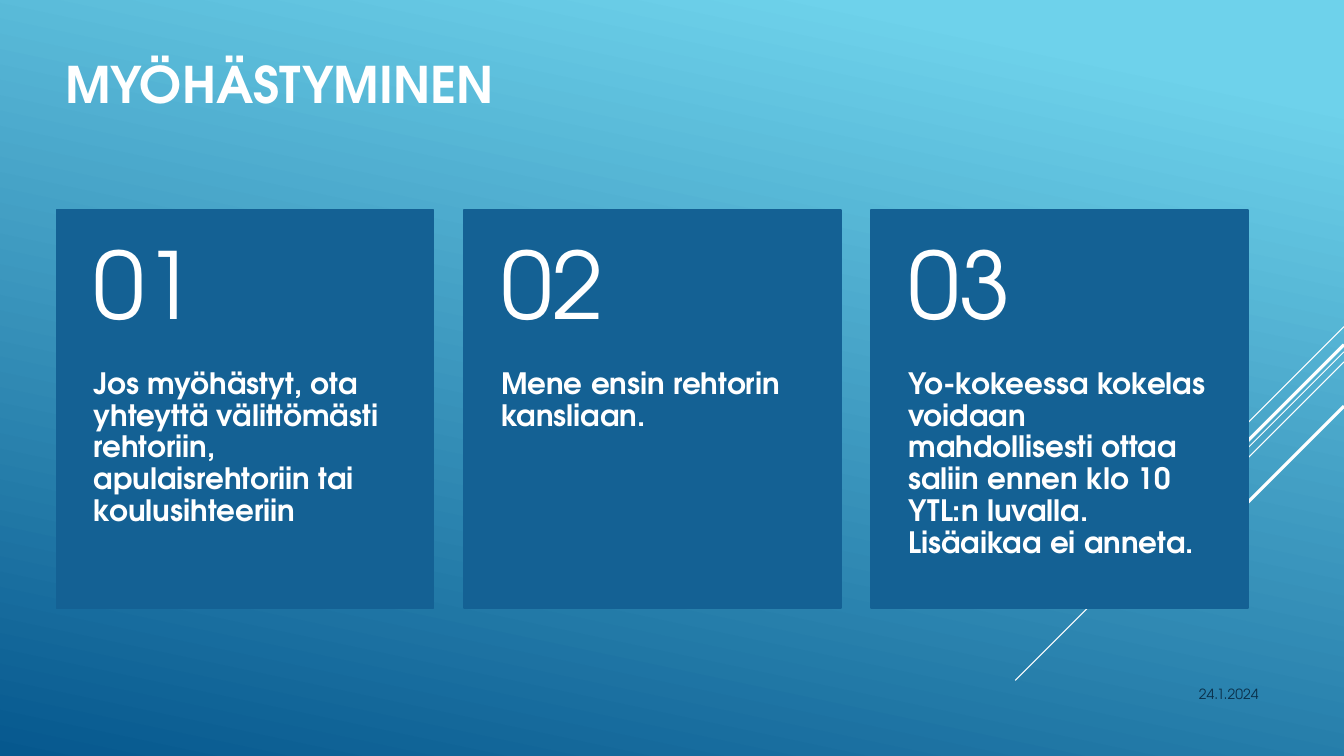
import dataclasses

import lxml.etree
import pptx
import pptx.dml.color
import pptx.enum.shapes
import pptx.enum.text
import pptx.oxml.ns
import pptx.util

Inches = pptx.util.Inches
Pt = pptx.util.Pt
Align = pptx.enum.text.PP_ALIGN
Anchor = pptx.enum.text.MSO_ANCHOR


@dataclasses.dataclass(frozen=True)
class Theme:
    font: str = "TeX Gyre Adventor"
    sky: str = "6ED2EB"
    deep: str = "06588E"
    card: str = "146194"
    light: str = "FFFFFF"
    dark: str = "0A304A"
    title_size: float = 36
    number_size: float = 66
    body_size: float = 21
    date_size: float = 10


def rgb(value):
    return pptx.dml.color.RGBColor.from_string(value)


class Painter:
    def __init__(self, page, theme):
        self.page = page
        self.theme = theme

    def background(self, angle):
        fill = self.page.background.fill
        fill.gradient()
        fill.gradient_angle = 360 - angle
        stops = ((0.1, self.theme.sky), (1, self.theme.deep))
        for stop, (position, color) in zip(fill.gradient_stops, stops):
            stop.position = position
            stop.color.rgb = rgb(color)

    def diagonal(self, top, run, width):
        right = 13.33
        line = self.page.shapes.add_connector(
            pptx.enum.shapes.MSO_CONNECTOR.STRAIGHT,
            Inches(right), Inches(top), Inches(right - run), Inches(top + run))
        line.line.color.rgb = rgb(self.theme.light)
        line.line.width = Pt(width)
        properties = line._element.spPr
        lxml.etree.SubElement(properties, pptx.oxml.ns.qn("a:effectLst"))

    def panel(self, left, top, width, height):
        box = self.page.shapes.add_shape(
            pptx.enum.shapes.MSO_SHAPE.RECTANGLE,
            Inches(left), Inches(top), Inches(width), Inches(height))
        box.shadow.inherit = False
        box.fill.solid()
        box.fill.fore_color.rgb = rgb(self.theme.card)
        box.line.color.rgb = rgb(self.theme.card)
        box.line.width = Pt(1.25)

    def text(self, words, place, size, color=None, bold=False, align=Align.LEFT,
             anchor=Anchor.TOP, insets=(0.1, 0.05, 0.1, 0.05), spacing=1.0):
        box = self.page.shapes.add_textbox(*map(Inches, place))
        frame = box.text_frame
        frame.word_wrap = True
        frame.vertical_anchor = anchor
        (frame.margin_left, frame.margin_top,
         frame.margin_right, frame.margin_bottom) = map(Inches, insets)
        frame.text = words
        para = frame.paragraphs[0]
        para.alignment = align
        para.line_spacing = spacing
        font = para.runs[0].font
        font.name = self.theme.font
        font.size = Pt(size)
        font.bold = bold
        font.color.rgb = rgb(color or self.theme.light)

    def card(self, number, words, left):
        top, width, height, head = 2.08, 3.74, 3.95, 1.58
        self.panel(left, top, width, height)
        self.text(words, (left, top + head, width, height - head),
                  self.theme.body_size, bold=True,
                  insets=(0.37, 0, 0.37, 0.36), spacing=0.9)
        self.text(f"{number:02d}", (left, top, width, head),
                  self.theme.number_size, anchor=Anchor.MIDDLE,
                  insets=(0.37, 0.18, 0.37, 0.18), spacing=0.9)


def main():
    deck = pptx.Presentation()
    deck.slide_width = Inches(13.33)
    deck.slide_height = Inches(7.5)
    theme = Theme()
    painter = Painter(deck.slides.add_slide(deck.slide_layouts[6]), theme)

    painter.background(102)
    diagonals = ((3.24, 1, 0.75), (3.49, 3.26, 0.75), (3.59, 2.07, 0.75),
                 (3.42, 1.91, 2.25), (4.03, 1.39, 2.25))
    for top, run, width in diagonals:
        painter.diagonal(top, run, width)

    painter.text("MYÖHÄSTYMINEN", (0.55, 0, 9.33, 1.65), theme.title_size,
                 bold=True, anchor=Anchor.MIDDLE)
    painter.text("24.1.2024", (10.83, 6.75, 1.75, 0.4), theme.date_size,
                 color=theme.dark, align=Align.RIGHT)

    steps = (
        "Jos myöhästyt, ota yhteyttä välittömästi rehtoriin, "
        "apulaisrehtoriin tai koulusihteeriin",
        "Mene ensin rehtorin kansliaan.",
        "Yo-kokeessa kokelas voidaan mahdollisesti ottaa saliin ennen "
        "klo 10 YTL:n luvalla. Lisäaikaa ei anneta.",
    )
    for index, words in enumerate(steps):
        painter.card(index + 1, words, 0.56 + index * 4.04)

    deck.save("out.pptx")


if __name__ == "__main__":
    main()
